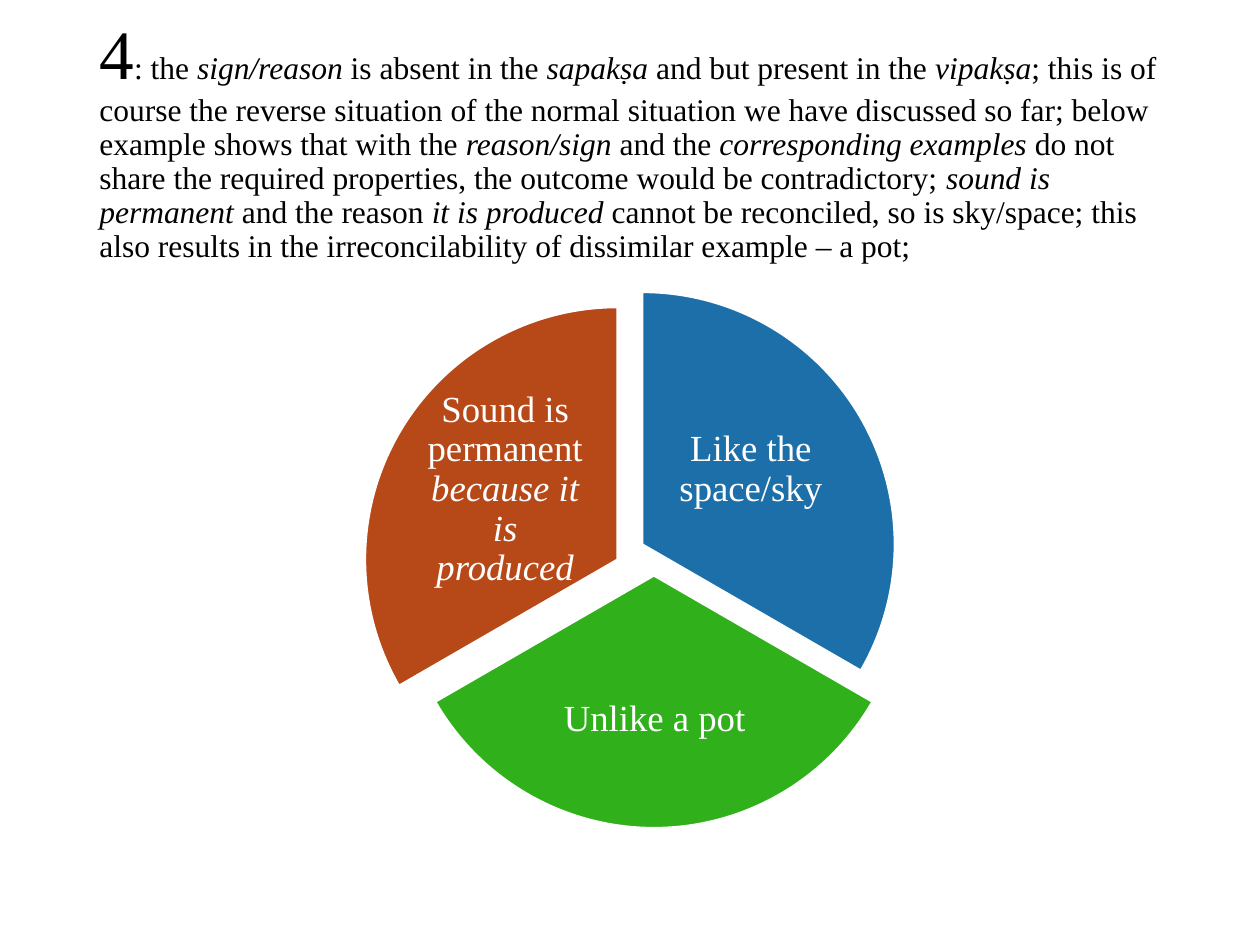
from typing import NamedTuple

from pptx import Presentation
from pptx.dml.color import RGBColor
from pptx.enum.shapes import MSO_SHAPE
from pptx.enum.text import MSO_ANCHOR, PP_ALIGN
from pptx.util import Inches, Pt

FONT = "Times New Roman"
BLACK, WHITE = "000000", "FFFFFF"
PIE_SIZE = 4
SLICE_ANGLE = 120
FIRST_ANGLE = 270
ADJUSTMENT_PER_DEGREE = 0.6

# Asterisks enclose italic passages.
EXPLANATION = (
    ": the *sign/reason* is absent in the *sapakṣa* and but present in the *vipakṣa*; "
    "this is of course the reverse situation of the normal situation we have discussed "
    "so far; below example shows that with the *reason/sign* and the "
    "*corresponding examples* do not share the required properties, the outcome would be "
    "contradictory; *sound is permanent* and the reason *it is produced* cannot be "
    "reconciled, so is sky/space; this also results in the irreconcilability of "
    "dissimilar example – a pot;"
)


class Box(NamedTuple):
    left: float
    top: float
    width: float
    height: float


class Slice(NamedTuple):
    left: float
    top: float
    color: str
    label: str
    label_box: Box


SLICES = [
    Slice(3.1, 2.32, "1D6FA9", "Like the space/sky", Box(5.28, 3.06, 1.36, 1.33)),
    Slice(3.19, 2.57, "30B01B", "Unlike a pot", Box(4.29, 5.09, 1.81, 1.24)),
    Slice(2.9, 2.44, "B74919", "Sound is permanent *because it is produced*",
          Box(3.33, 3.22, 1.36, 1.33)),
]


def rgb(color: str) -> RGBColor:
    return RGBColor.from_string(color)


def add_runs(paragraph, text: str, size: float, color: str) -> None:
    """Append text, setting passages between asterisks in italics."""
    for index, passage in enumerate(text.split("*")):
        if not passage:
            continue
        run = paragraph.add_run()
        run.text = passage
        run.font.name = FONT
        run.font.size = Pt(size)
        run.font.italic = index % 2 == 1
        run.font.color.rgb = rgb(color)


def add_text_box(shapes, box: Box, horizontal_margin: float, vertical_margin: float):
    """Add a wrapped, vertically centred text box and return its paragraph."""
    text_frame = shapes.add_textbox(*map(Inches, box)).text_frame
    text_frame.word_wrap = True
    text_frame.vertical_anchor = MSO_ANCHOR.MIDDLE
    text_frame.margin_left = text_frame.margin_right = Inches(horizontal_margin)
    text_frame.margin_top = text_frame.margin_bottom = Inches(vertical_margin)
    paragraph = text_frame.paragraphs[0]
    paragraph.line_spacing = 0.9
    return paragraph


def add_slice(shapes, pie_slice: Slice, start_angle: int) -> None:
    shape = shapes.add_shape(
        MSO_SHAPE.PIE, Inches(pie_slice.left), Inches(pie_slice.top),
        Inches(PIE_SIZE), Inches(PIE_SIZE))
    end_angle = (start_angle + SLICE_ANGLE) % 360
    shape.adjustments[0] = start_angle * ADJUSTMENT_PER_DEGREE
    shape.adjustments[1] = end_angle * ADJUSTMENT_PER_DEGREE
    shape.shadow.inherit = False
    shape.fill.solid()
    shape.fill.fore_color.rgb = rgb(pie_slice.color)
    shape.line.color.rgb = rgb(WHITE)
    shape.line.width = Pt(1)

    paragraph = add_text_box(shapes, pie_slice.label_box, 0.03, 0.03)
    paragraph.alignment = PP_ALIGN.CENTER
    add_runs(paragraph, pie_slice.label, 21, WHITE)


def main() -> None:
    presentation = Presentation()
    presentation.slide_width = Inches(10)
    presentation.slide_height = Inches(7.5)
    slide = presentation.slides.add_slide(presentation.slide_layouts[6])

    title = add_text_box(slide.shapes, Box(0.69, 0.4, 8.62, 1.45), 0.1, 0.05)
    add_runs(title, "4", 39.6, BLACK)
    add_runs(title, EXPLANATION, 18, BLACK)

    pie = slide.shapes.add_group_shape()
    for index, pie_slice in enumerate(SLICES):
        add_slice(pie.shapes, pie_slice, (FIRST_ANGLE + index * SLICE_ANGLE) % 360)

    presentation.save("out.pptx")


if __name__ == "__main__":
    main()
